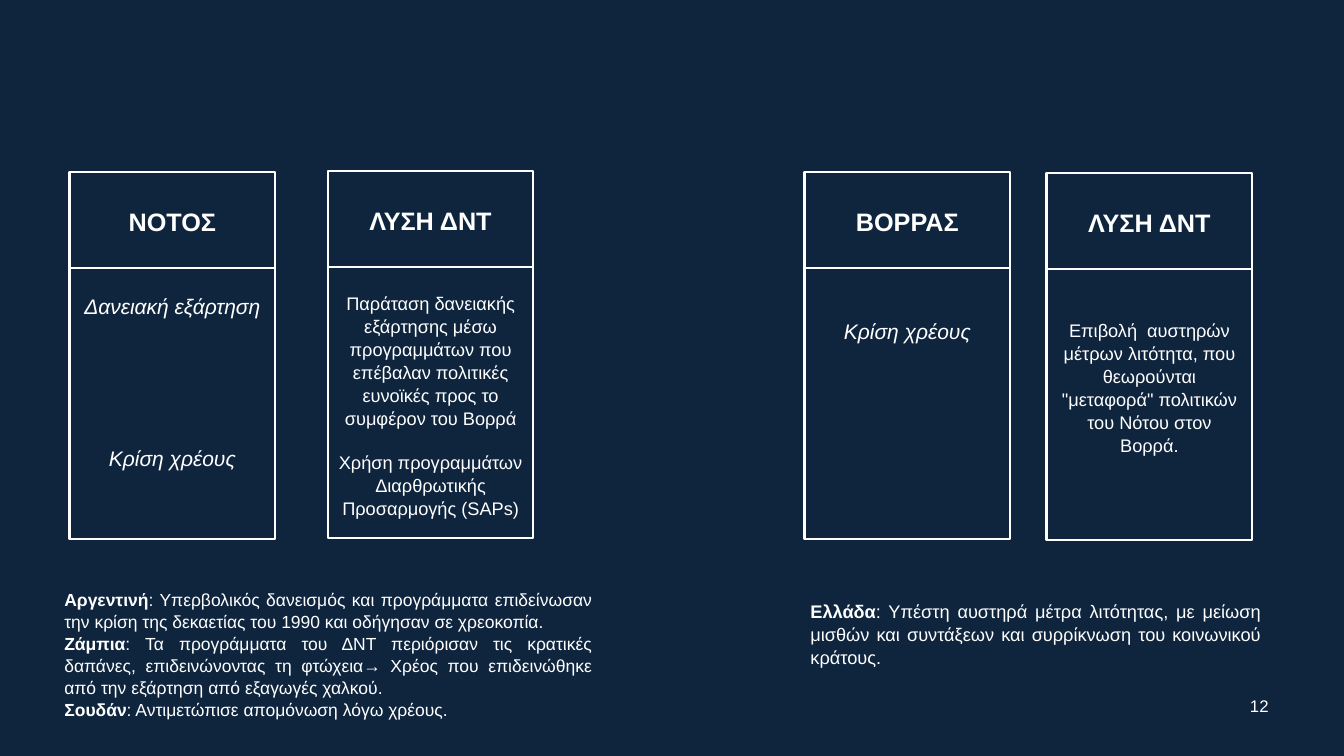
from pptx import Presentation
from pptx.dml.color import RGBColor
from pptx.enum.shapes import MSO_SHAPE
from pptx.enum.text import MSO_ANCHOR, PP_ALIGN
from pptx.util import Inches, Pt

NAVY = RGBColor(0x0F, 0x25, 0x3E)
WHITE = RGBColor(0xFF, 0xFF, 0xFF)
RECTANGLE = MSO_SHAPE.RECTANGLE
TOP, MIDDLE = MSO_ANCHOR.TOP, MSO_ANCHOR.MIDDLE
CENTER, JUSTIFY = PP_ALIGN.CENTER, PP_ALIGN.JUSTIFY
FONT = "Arial"
LINE_SPACING = 1.05

BOX_WIDTH, HEADER_HEIGHT, BODY_HEIGHT = 2.04, 0.95, 2.69


def write(shape, paragraphs, size, align=CENTER, anchor=TOP, inset_top=0.05,
          gap=0, bold=False, italic=False):
    """Fill a shape with paragraphs; a (lead, rest) pair gets a bold lead."""
    frame = shape.text_frame
    frame.word_wrap = True
    frame.vertical_anchor = anchor
    frame.margin_top = Inches(inset_top)
    for index, content in enumerate(paragraphs):
        paragraph = frame.add_paragraph() if index else frame.paragraphs[0]
        paragraph.alignment = align
        paragraph.line_spacing = LINE_SPACING
        paragraph.space_before = Pt(gap if index else 0)
        if isinstance(content, tuple):
            runs = [(content[0], True), (content[1], False)]
        else:
            runs = [(content, bold)]
        for text, is_bold in runs:
            run = paragraph.add_run()
            run.text = text
            run.font.name = FONT
            run.font.size = Pt(size)
            run.font.bold = is_bold
            run.font.italic = italic
            run.font.color.rgb = WHITE


prs = Presentation()
prs.slide_width = Inches(13.33)
prs.slide_height = Inches(7.5)
slide = prs.slides.add_slide(prs.slide_layouts[6])
slide.background.fill.solid()
slide.background.fill.fore_color.rgb = NAVY

# left, top, heading, body paragraphs, body format
columns = [
    (0.69, 1.71, "ΝΟΤΟΣ", ["Δανειακή εξάρτηση", "Κρίση χρέους"],
     dict(size=15, italic=True, inset_top=0.24, gap=90)),
    (3.25, 1.7, "ΛΥΣΗ ΔΝΤ",
     ["Παράταση δανειακής εξάρτησης μέσω προγραμμάτων που επέβαλαν πολιτικές "
      "ευνοϊκές προς το συμφέρον του Βορρά",
      "Χρήση προγραμμάτων Διαρθρωτικής Προσαρμογής (SAPs)"],
     dict(size=13, inset_top=0.24, gap=15.5)),
    (7.98, 1.71, "ΒΟΡΡΑΣ", ["Κρίση χρέους"],
     dict(size=15, italic=True, inset_top=0.49)),
    (10.38, 1.72, "ΛΥΣΗ ΔΝΤ",
     ["Επιβολή  αυστηρών μέτρων λιτότητα, που θεωρούνται \"μεταφορά\" "
      "πολιτικών του Νότου στον Βορρά."],
     dict(size=13, inset_top=0.49)),
]
header_format = dict(size=18, bold=True, anchor=MIDDLE)

for left, top, heading, body, body_format in columns:
    cells = [
        (top, HEADER_HEIGHT, [heading], header_format),
        (top + HEADER_HEIGHT, BODY_HEIGHT, body, body_format),
    ]
    for cell_top, height, paragraphs, text_format in cells:
        cell = slide.shapes.add_shape(
            RECTANGLE, Inches(left), Inches(cell_top),
            Inches(BOX_WIDTH), Inches(height))
        cell.shadow.inherit = False
        cell.fill.background()
        cell.line.color.rgb = WHITE
        cell.line.width = Pt(1.5)
        write(cell, paragraphs, **text_format)

south_examples = [
    ("Αργεντινή", ": Υπερβολικός δανεισμός και προγράμματα επιδείνωσαν την "
     "κρίση της δεκαετίας του 1990 και οδήγησαν σε χρεοκοπία."),
    ("Ζάμπια", ": Τα προγράμματα του ΔΝΤ περιόρισαν τις κρατικές δαπάνες, "
     "επιδεινώνοντας τη φτώχεια→ Χρέος που επιδεινώθηκε από την εξάρτηση "
     "από εξαγωγές χαλκού."),
    ("Σουδάν", ": Αντιμετώπισε απομόνωση λόγω χρέους."),
]
north_examples = [
    ("Ελλάδα", ": Υπέστη αυστηρά μέτρα λιτότητας, με μείωση μισθών και "
     "συντάξεων και συρρίκνωση του κοινωνικού κράτους."),
]
notes = [
    (0.54, 5.78, 5.43, 1.57, south_examples, dict(size=12.5, align=JUSTIFY)),
    (7.94, 5.9, 4.66, 1.36, north_examples, dict(size=13, align=JUSTIFY)),
    (12.24, 6.8, 0.5, 0.4, ["12"], dict(size=12, anchor=MIDDLE)),
]
for left, top, width, height, paragraphs, text_format in notes:
    note = slide.shapes.add_textbox(
        Inches(left), Inches(top), Inches(width), Inches(height))
    write(note, paragraphs, **text_format)

prs.save("out.pptx")
